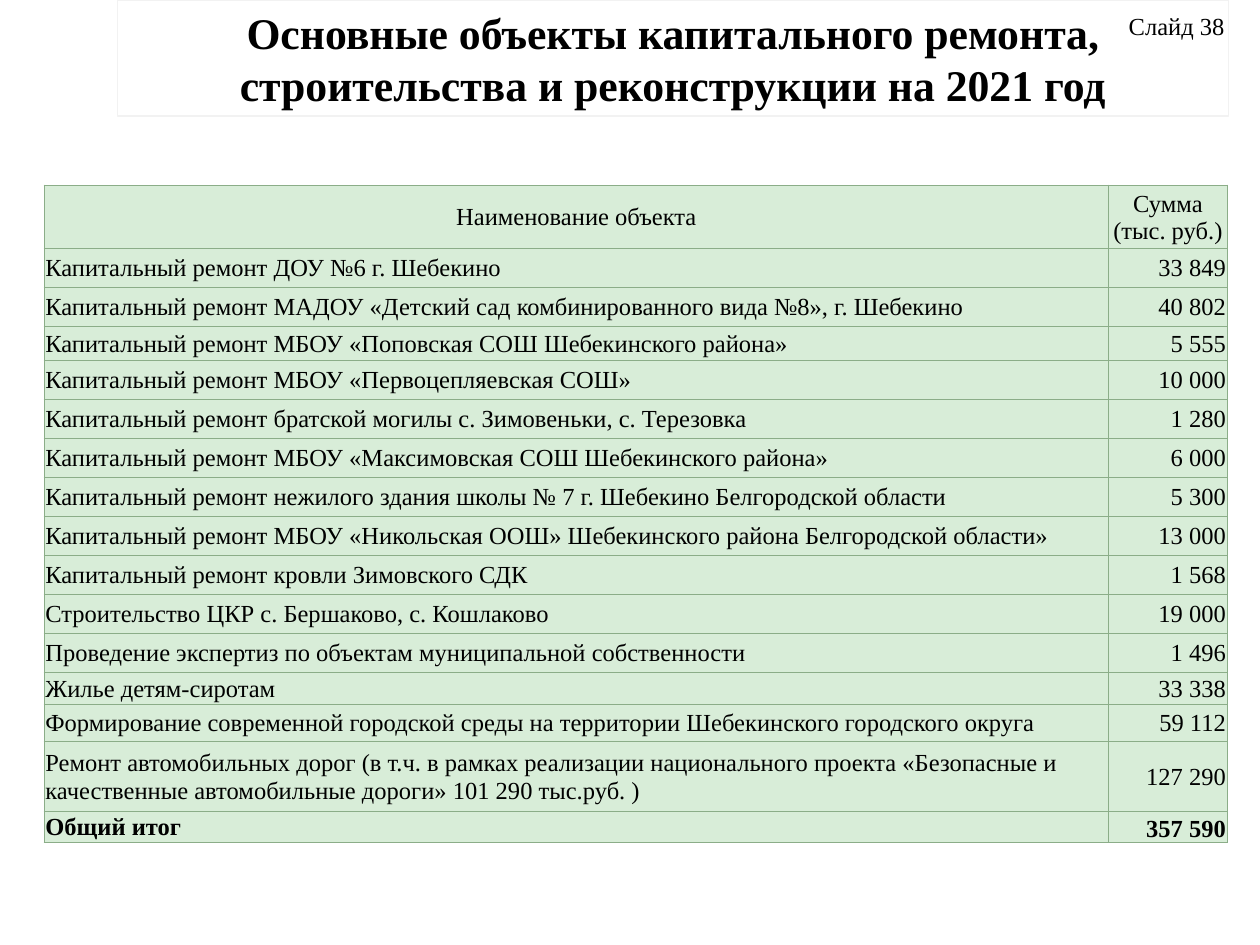
from lxml.etree import SubElement
from pptx import Presentation
from pptx.dml.color import RGBColor
from pptx.enum.text import MSO_ANCHOR as Anchor, MSO_AUTO_SIZE as AutoSize, PP_ALIGN as Align
from pptx.oxml.ns import qn
from pptx.util import Inches, Pt

COLORS = {"text": "000000", "paper": "FFFFFF", "frame": "F2F2F2",
          "cell": "D8EDD8", "border": "8BAD88"}
TITLE = "Основные объекты капитального ремонта, строительства и реконструкции на 2021 год"
HEADER = ("Наименование объекта", "Сумма (тыс. руб.)")
OBJECTS = [
    ("Капитальный ремонт ДОУ №6 г. Шебекино", "33 849"),
    ("Капитальный ремонт МАДОУ «Детский сад комбинированного вида №8», г. Шебекино", "40 802"),
    ("Капитальный ремонт МБОУ «Поповская СОШ Шебекинского района»", "5 555"),
    ("Капитальный ремонт МБОУ «Первоцепляевская СОШ»", "10 000"),
    ("Капитальный ремонт братской могилы с. Зимовеньки, с. Терезовка", "1 280"),
    ("Капитальный ремонт МБОУ «Максимовская СОШ Шебекинского района»", "6 000"),
    ("Капитальный ремонт нежилого здания школы № 7 г. Шебекино Белгородской области", "5 300"),
    ("Капитальный ремонт МБОУ «Никольская ООШ» Шебекинского района Белгородской области»", "13 000"),
    ("Капитальный ремонт кровли Зимовского СДК", "1 568"),
    ("Строительство ЦКР с. Бершаково, с. Кошлаково", "19 000"),
    ("Проведение экспертиз по объектам муниципальной собственности", "1 496"),
    ("Жилье детям-сиротам", "33 338"),
    ("Формирование современной городской среды на территории Шебекинского городского округа", "59 112"),
    ("Ремонт автомобильных дорог (в т.ч. в рамках реализации национального проекта "
     "«Безопасные и качественные автомобильные дороги» 101 290 тыс.руб. )", "127 290"),
]
TOTAL = ("Общий итог", "357 590")
COLUMN_WIDTHS = (8.45, 0.94)
ROW_HEIGHT = 0.31
SPECIAL_HEIGHTS = {0: 0.5, 3: 0.27, 12: 0.25, 13: 0.3, 14: 0.55, 15: 0.25}


def rgb(name):
    return RGBColor.from_string(COLORS[name])


def set_attributes(target, values):
    for name, value in values.items():
        setattr(target, name, value)


def write(frame, text, size, bold=False, align=Align.LEFT):
    para = frame.paragraphs[0]
    para.alignment = align
    span = para.add_run()
    span.text = text
    set_attributes(span.font, {"name": "Times New Roman", "size": Pt(size), "bold": bold})
    span.font.color.rgb = rgb("text")


def place_title(page, box):
    title = page.shapes.title
    set_attributes(title, dict(zip(("left", "top", "width", "height"), map(Inches, box))))
    title.fill.solid()
    title.fill.fore_color.rgb = rgb("paper")
    title.line.color.rgb = rgb("frame")
    title.line.width = Pt(0.75)
    set_attributes(title.text_frame, {"auto_size": AutoSize.NONE, "word_wrap": True,
                                      "vertical_anchor": Anchor.MIDDLE})
    write(title.text_frame, TITLE, 25, True, Align.CENTER)


def draw_borders(cell):
    properties = cell._tc.get_or_add_tcPr()
    for position, side in enumerate(("lnL", "lnR", "lnT", "lnB")):
        line = properties.makeelement(qn(f"a:{side}"), {"w": str(Pt(0.75))})
        properties.insert(position, line)
        fill = SubElement(line, qn("a:solidFill"))
        SubElement(fill, qn("a:srgbClr"), val=COLORS["border"])


def place_table(page, box):
    rows = [HEADER, *OBJECTS, TOTAL]
    last = len(rows) - 1
    table = page.shapes.add_table(len(rows), len(HEADER), *map(Inches, box)).table
    set_attributes(table, {"first_row": False, "horz_banding": False})
    for column, width in zip(table.columns, COLUMN_WIDTHS):
        column.width = Inches(width)
    margins = {"margin_left": Inches(0.01), "margin_right": Inches(0.01),
               "margin_top": Inches(0.01), "margin_bottom": 0}
    for row, texts in enumerate(rows):
        table.rows[row].height = Inches(SPECIAL_HEIGHTS.get(row, ROW_HEIGHT))
        aligns = (Align.CENTER, Align.CENTER) if row == 0 else (Align.LEFT, Align.RIGHT)
        for column, (text, align) in enumerate(zip(texts, aligns)):
            cell = table.cell(row, column)
            set_attributes(cell, margins)
            cell.vertical_anchor = Anchor.BOTTOM if (row, column) == (last, 1) else Anchor.MIDDLE
            cell.fill.solid()
            cell.fill.fore_color.rgb = rgb("cell")
            draw_borders(cell)
            write(cell.text_frame, text, 14, row == last, align)


def place_slide_label(page, box):
    label = page.shapes.add_textbox(*map(Inches, box))
    set_attributes(label.text_frame, {"word_wrap": False, "auto_size": AutoSize.SHAPE_TO_FIT_TEXT})
    write(label.text_frame, "Слайд 38", 14)


def main():
    deck = Presentation()
    set_attributes(deck, {"slide_width": Inches(10), "slide_height": Inches(7.5)})
    page = deck.slides.add_slide(deck.slide_layouts[5])
    place_title(page, (0.93, 0, 8.82, 0.92))
    place_table(page, (0.35, 1.47, 9.39, 5.21))
    place_slide_label(page, (8.86, 0.04, 0.98, 0.34))
    deck.save("out.pptx")


if __name__ == "__main__":
    main()
